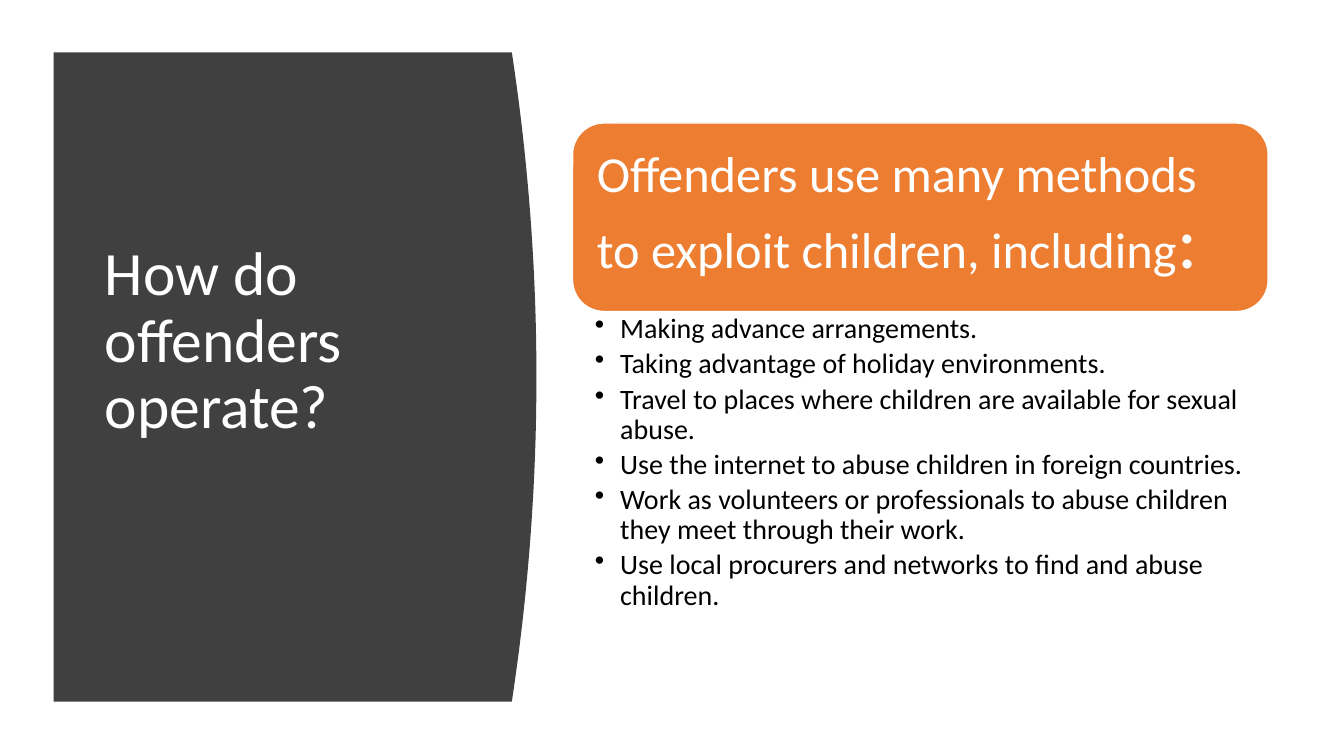
"""Build a slide on how offenders operate: dark title panel, orange heading, bullet list."""
from lxml import etree
from pptx import Presentation
from pptx.dml.color import RGBColor
from pptx.enum.shapes import MSO_SHAPE as Shape
from pptx.enum.text import MSO_ANCHOR as Anchor, PP_ALIGN as Align
from pptx.oxml.ns import qn
from pptx.util import Cm, Pt

TITLE = "How do offenders operate?"
HEADING = "Offenders use many methods to exploit children, including"
HEADING_END = ":"
METHODS = [
    "Making advance arrangements.",
    "Taking advantage of holiday environments.",
    "Travel to places where children are available for sexual abuse.",
    "Use the internet to abuse children in foreign countries.",
    "Work as volunteers or professionals to abuse children they meet through their work.",
    "Use local procurers and networks to find and abuse children.",
]

WHITE = RGBColor(0xFF, 0xFF, 0xFF)
BLACK = RGBColor(0x00, 0x00, 0x00)
CHARCOAL = RGBColor(0x40, 0x40, 0x40)
ORANGE = RGBColor(0xED, 0x7D, 0x31)
FONT = "Calibri"

PANEL_LEFT, PANEL_TOP, PANEL_WIDTH, PANEL_HEIGHT = 1.35, 1.32, 11.55, 16.36
BULGE, CURVE_STEPS = 0.62, 40
TITLE_BOX = (2.39, 2.82, 9.5, 13.31)
CARD_LEFT, CARD_TOP, CARD_WIDTH, CARD_HEIGHT = 14.43, 3.1, 17.53, 4.75
CARD_PADDING = 0.23
LIST_HEIGHT, BULLET_INDENT = 8.03, 0.64


def add_panel(slide):
    right = PANEL_LEFT + PANEL_WIDTH
    points = []
    for step in range(CURVE_STEPS + 1):
        share = step / CURVE_STEPS
        x = right + BULGE * (1 - (2 * share - 1) ** 2)
        points.append((Cm(x), Cm(PANEL_TOP + PANEL_HEIGHT * share)))
    points.append((Cm(PANEL_LEFT), Cm(PANEL_TOP + PANEL_HEIGHT)))
    builder = slide.shapes.build_freeform(Cm(PANEL_LEFT), Cm(PANEL_TOP))
    builder.add_line_segments(points, close=True)
    panel = builder.convert_to_shape()
    panel.shadow.inherit = False
    panel.fill.solid()
    panel.fill.fore_color.rgb = CHARCOAL
    panel.line.fill.background()


def add_text_frame(slide, box, insets, anchor):
    frame = slide.shapes.add_textbox(*map(Cm, box)).text_frame
    frame.word_wrap = True
    frame.vertical_anchor = anchor
    (frame.margin_left, frame.margin_top,
     frame.margin_right, frame.margin_bottom) = map(Cm, insets)
    return frame


def style(paragraph, size, color):
    paragraph.alignment = Align.LEFT
    paragraph.line_spacing = 0.9
    paragraph.font.name = FONT
    paragraph.font.size = Pt(size)
    paragraph.font.color.rgb = color


def add_bullet(paragraph):
    properties = paragraph._p.get_or_add_pPr()
    properties.set("marL", str(Cm(BULLET_INDENT)))
    properties.set("indent", str(-Cm(BULLET_INDENT)))
    etree.SubElement(properties, qn("a:buChar")).set("char", "•")
    properties.append(properties.find(qn("a:defRPr")))


def add_title(slide):
    frame = add_text_frame(slide, TITLE_BOX, (0.25, 0.13, 0.25, 1.83), Anchor.MIDDLE)
    frame.text = TITLE
    style(frame.paragraphs[0], 44, WHITE)


def add_heading(slide):
    card = slide.shapes.add_shape(
        Shape.ROUNDED_RECTANGLE, Cm(CARD_LEFT), Cm(CARD_TOP), Cm(CARD_WIDTH), Cm(CARD_HEIGHT))
    card.shadow.inherit = False
    card.fill.solid()
    card.fill.fore_color.rgb = ORANGE
    card.line.color.rgb = WHITE
    card.line.width = Pt(1)

    box = (CARD_LEFT + CARD_PADDING, CARD_TOP + CARD_PADDING,
           CARD_WIDTH - 2 * CARD_PADDING, CARD_HEIGHT - 2 * CARD_PADDING)
    frame = add_text_frame(slide, box, (0.38,) * 4, Anchor.MIDDLE)
    paragraph = frame.paragraphs[0]
    paragraph.add_run().text = HEADING
    colon = paragraph.add_run()
    colon.text = HEADING_END
    colon.font.size = Pt(54)
    style(paragraph, 36, WHITE)


def add_methods(slide):
    box = (CARD_LEFT, CARD_TOP + CARD_HEIGHT, CARD_WIDTH, LIST_HEIGHT)
    frame = add_text_frame(slide, box, (0.56, 0.08, 0.41, 0.08), Anchor.TOP)
    frame.text = "\n".join(METHODS)
    for paragraph in frame.paragraphs:
        style(paragraph, 20, BLACK)
        paragraph.space_after = Pt(3.5)
        add_bullet(paragraph)


def main():
    presentation = Presentation()
    presentation.slide_width, presentation.slide_height = Cm(33.87), Cm(19.05)
    slide = presentation.slides.add_slide(presentation.slide_layouts[6])
    add_panel(slide)
    add_title(slide)
    add_heading(slide)
    add_methods(slide)
    presentation.save("out.pptx")


if __name__ == "__main__":
    main()
